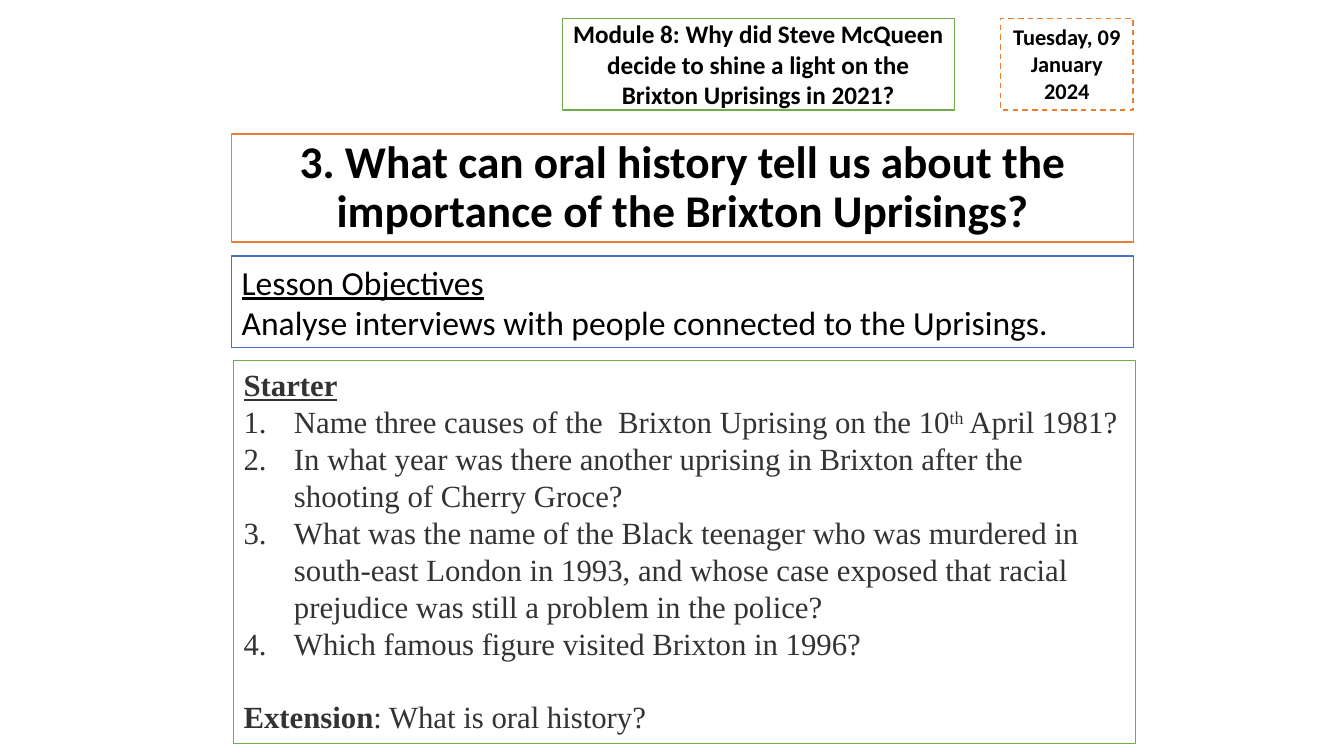
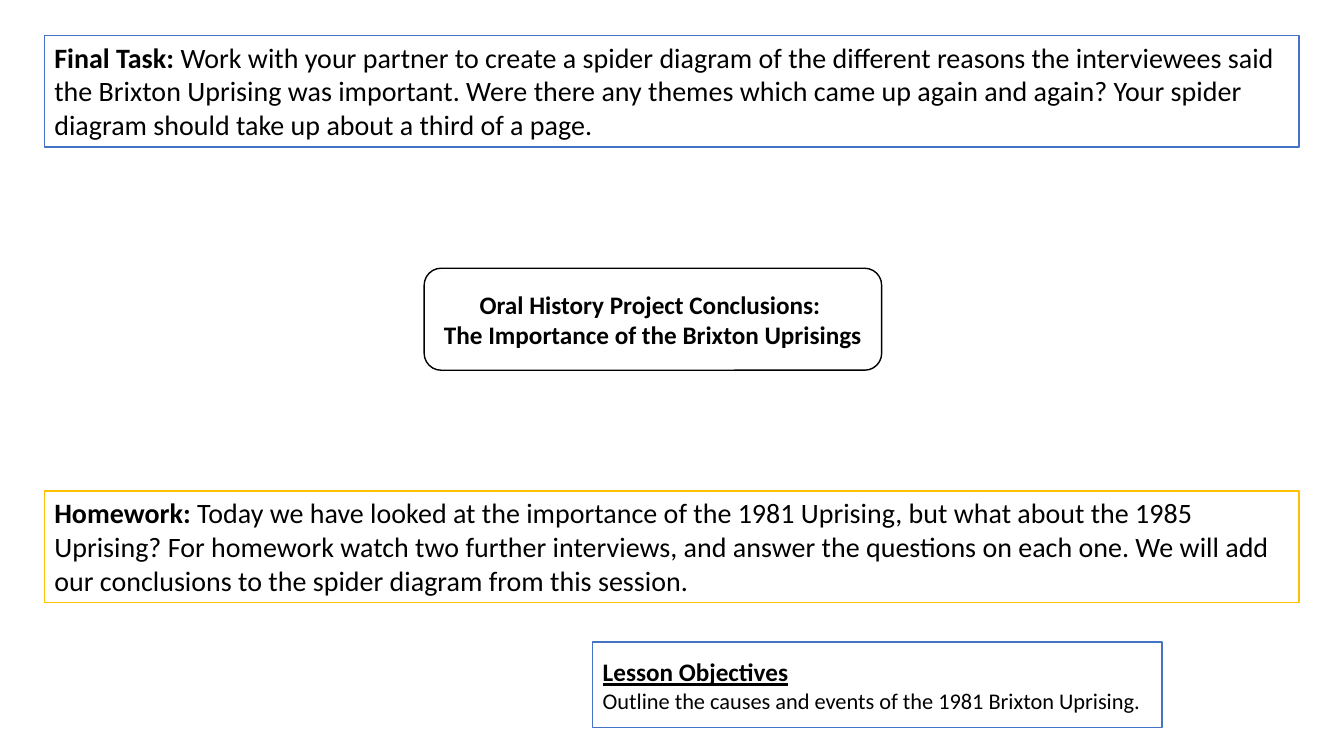
import pptx
import pptx.util
import pptx.dml.color
import pptx.enum.dml
import pptx.enum.shapes
import pptx.enum.text
import pptx.oxml.ns
import lxml.etree

Cm, Pt = pptx.util.Cm, pptx.util.Pt
Kind = pptx.enum.shapes.MSO_SHAPE
Align = pptx.enum.text.PP_ALIGN
Anchor = pptx.enum.text.MSO_ANCHOR

# Shared style
HUES = {"white": "FFFFFF", "black": "000000", "grey": "333333", "blue": "4472C4",
        "green": "70AD47", "orange": "ED7D31", "gold": "FFC000"}
SANS, SERIF = "Calibri", "Times New Roman"
BOLD = {"bold": True}
HEAD = {"bold": True, "underline": True}
MAIN_X, MAIN_W = 5.84, 22.73
TOP_Y, TOP_H = 0.46, 2.31
TASK_X, TASK_W, TASK_H = 1.12, 31.62, 2.82


def hue(name):
    return pptx.dml.color.RGBColor.from_string(HUES[name])


def apply(thing, looks):
    """Set each attribute named in the dict."""
    for key, value in looks.items():
        setattr(thing, key, value)


def frame(shape, area, edge):
    """Place a white box with a thin coloured edge."""
    apply(shape, dict(zip(("left", "top", "width", "height"), map(Cm, area))))
    shape.fill.solid()
    shape.fill.fore_color.rgb = hue("white")
    shape.line.color.rgb = hue(edge)
    shape.line.width = Pt(1)


def write(shape, paras, size, face=SANS, ink="black", anchor=Anchor.MIDDLE, **looks):
    """Fill a box; each paragraph is a list of (text, font looks) runs."""
    body = shape.text_frame
    apply(body, {"word_wrap": True, "vertical_anchor": anchor,
                 "auto_size": pptx.enum.text.MSO_AUTO_SIZE.NONE})
    for spot, runs in enumerate(paras):
        para = body.add_paragraph() if spot else body.paragraphs[0]
        apply(para, {"alignment": Align.LEFT, **looks})
        for text, style in runs:
            run = para.add_run()
            run.text = text
            apply(run.font, {"name": face, "size": Pt(size), "bold": False, **style})
            run.font.color.rgb = hue(ink)
    return body.paragraphs


def box(slide, area, edge, paras, size, kind=Kind.RECTANGLE, **looks):
    shape = slide.shapes.add_shape(kind, 0, 0, 0, 0)
    shape.shadow.inherit = False
    frame(shape, area, edge)
    write(shape, paras, size, **looks)
    return shape


def count(para):
    """Number a paragraph with a hanging indent."""
    props = para._p.get_or_add_pPr()
    inch = Cm(1.27)
    props.set("marL", str(inch))
    props.set("indent", str(-inch))
    lxml.etree.SubElement(props, pptx.oxml.ns.qn("a:buAutoNum"), type="arabicPeriod")


def lesson(deck):
    slide = deck.slides.add_slide(deck.slide_layouts[5])

    # Title
    title = slide.shapes.title
    frame(title, (MAIN_X, 3.38, MAIN_W, 2.72), "orange")
    write(title, [[("3. What can oral history tell us about the importance of the "
                    "Brixton Uprisings?", BOLD)]], 32.4,
          anchor=Anchor.BOTTOM, alignment=Align.CENTER, line_spacing=0.9)

    # Date and module
    date = box(slide, (25.22, TOP_Y, 3.33, TOP_H), "orange",
               [[("Tuesday, 09 January 2024", BOLD)]], 16,
               anchor=Anchor.TOP, alignment=Align.CENTER)
    date.line.dash_style = pptx.enum.dml.MSO_LINE.DASH
    box(slide, (14.17, TOP_Y, 9.88, TOP_H), "green",
        [[("Module 8: Why did Steve McQueen decide to shine a light on the "
           "Brixton Uprisings in 2021?", BOLD)]], 18, alignment=Align.CENTER)

    # Goals
    box(slide, (MAIN_X, 6.45, MAIN_W, TOP_H), "blue",
        [[("Lesson Objectives", {"underline": True})],
         [("Analyse interviews with people connected to the Uprisings.", {})]], 24)

    # Starter questions
    asks = [
        [("Name three causes of the  Brixton Uprising on the 10", {}), ("th", {}),
         (" April 1981?", {})],
        [("In what year was there another uprising in Brixton after the "
          "shooting of Cherry Groce?", {})],
        [("What was the name of the Black teenager who was murdered in south-east "
          "London in 1993, and whose case exposed that racial prejudice was still "
          "a problem in the police?", {})],
        [("Which famous figure visited Brixton in 1996?", {})],
    ]
    start = box(slide, (5.89, 9.09, MAIN_W, 9.65), "green",
                [[("Starter", HEAD)], *asks,
                 [("Extension", BOLD), (": What is oral history?", {})]], 22,
                face=SERIF, ink="grey", anchor=Anchor.TOP, line_spacing=Pt(26.4))
    paras = start.text_frame.paragraphs
    for para in paras[1:-1]:
        count(para)
    paras[1].runs[1].font._element.set("baseline", "30000")
    paras[-1].space_before = Pt(26.4)


def finish(deck):
    slide = deck.slides.add_slide(deck.slide_layouts[6])

    # Goals
    goals = box(slide, (14.94, 16.18, 14.35, 2.16), "blue",
                [[("Lesson Objectives", HEAD)],
                 [("Outline the causes and events of the 1981 Brixton Uprising.",
                   {"size": Pt(16)})]], 18)

    # Tasks
    tasks = [
        (0.89, "blue", "Final Task: ",
         "Work with your partner to create a spider diagram of the different reasons "
         "the interviewees said the Brixton Uprising was important. Were there any "
         "themes which came up again and again? Your spider diagram should take up "
         "about a third of a page."),
        (12.37, "gold", "Homework: ",
         "Today we have looked at the importance of the 1981 Uprising, but what about "
         "the 1985 Uprising? For homework watch two further interviews, and answer "
         "the questions on each one. We will add our conclusions to the spider "
         "diagram from this session."),
    ]
    for top, edge, label, text in tasks:
        box(slide, (TASK_X, top, TASK_W, TASK_H), edge,
            [[(label, BOLD), (text, {})]], 20, anchor=Anchor.TOP)

    # Centre of the spider diagram
    box(slide, (10.69, 6.76, 11.53, 2.57), "black",
        [[("Oral History Project Conclusions: ", BOLD)],
         [("The Importance of the Brixton Uprisings", BOLD)]], 18,
        kind=Kind.ROUNDED_RECTANGLE, alignment=Align.CENTER)


def main():
    deck = pptx.Presentation()
    apply(deck, {"slide_width": Cm(33.87), "slide_height": Cm(19.05)})
    lesson(deck)
    finish(deck)
    deck.save("out.pptx")


if __name__ == "__main__":
    main()
